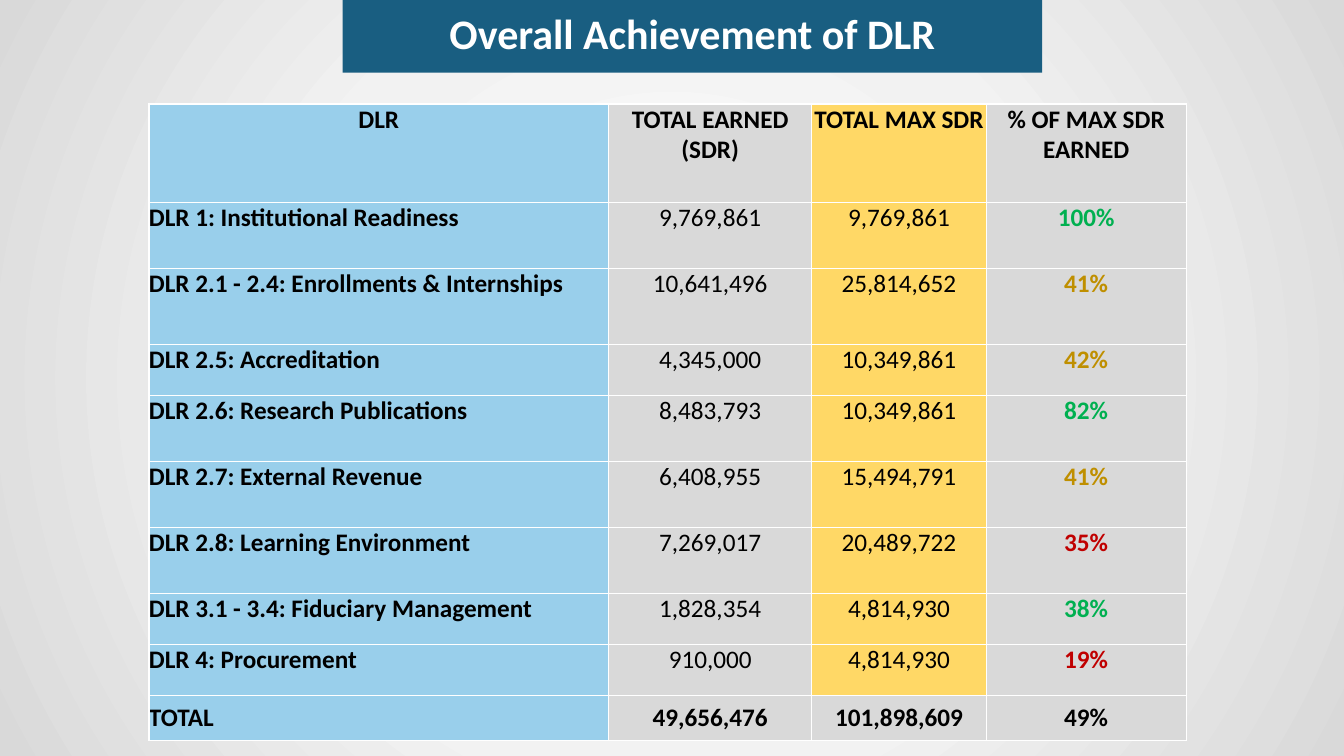
from pptx import Presentation
from pptx.dml.color import RGBColor
from pptx.enum.shapes import MSO_SHAPE
from pptx.enum.text import MSO_ANCHOR as ANCHOR, PP_ALIGN as ALIGN
from pptx.oxml import parse_xml
from pptx.oxml.ns import nsdecls, qn
from pptx.util import Pt

COLORS = {
    "white": "FFFFFF", "black": "000000", "navy": "195E81",
    "blue": "99CFEB", "gray": "D9D9D9", "yellow": "FFD866",
    "green": "00B050", "amber": "BF8F00", "red": "C00000", "light": "F2F2F2",
}


def rgb(name):
    return RGBColor.from_string(COLORS[name])


def write(tf, text, size=18, color="black", bold=True, align=ALIGN.CENTER, spacing=None):
    p = tf.paragraphs[0]
    p.alignment = align
    p.line_spacing = spacing
    r = p.add_run()
    r.text = text
    r.font.name = "Calibri"
    r.font.size = Pt(size)
    r.font.bold = bold
    r.font.color.rgb = rgb(color)


prs = Presentation()
prs.slide_width, prs.slide_height = Pt(960), Pt(540)
s = prs.slides.add_slide(prs.slide_layouts[6])

# Radial background
s.background.fill.gradient()
grad = s.element.find(".//" + qn("a:gradFill"))
stops = "".join(
    f'<a:gs pos="{pos * 1000}"><a:srgbClr val="{COLORS[name]}"/></a:gs>'
    for pos, name in [(0, "white"), (52, "light"), (100, "gray")])
grad.getparent().replace(grad, parse_xml(
    f'<a:gradFill {nsdecls("a")} rotWithShape="1"><a:gsLst>{stops}</a:gsLst>'
    '<a:path path="circle"><a:fillToRect l="50000" t="50000" r="50000" b="50000"/></a:path>'
    '</a:gradFill>'))

# Title banner
sp = s.shapes.add_shape(MSO_SHAPE.RECTANGLE, Pt(244.8), Pt(0), Pt(499.7), Pt(52))
sp.shadow.inherit = False
sp.fill.solid()
sp.fill.fore_color.rgb = rgb("navy")
sp.line.fill.background()
sp.text_frame.word_wrap = True
sp.text_frame.vertical_anchor = ANCHOR.MIDDLE
write(sp.text_frame, "Overall Achievement of DLR", size=30, color="white", spacing=0.9)

# Table data: cells, then the colour of the percentage
rows = [
    ("DLR", "TOTAL EARNED (SDR)", "TOTAL MAX SDR", "% OF MAX SDR EARNED", "black"),
    ("DLR 1: Institutional Readiness", "9,769,861", "9,769,861", "100%", "green"),
    ("DLR 2.1 - 2.4: Enrollments & Internships", "10,641,496", "25,814,652", "41%", "amber"),
    ("DLR 2.5: Accreditation", "4,345,000", "10,349,861", "42%", "amber"),
    ("DLR 2.6: Research Publications", "8,483,793", "10,349,861", "82%", "green"),
    ("DLR 2.7: External Revenue", "6,408,955", "15,494,791", "41%", "amber"),
    ("DLR 2.8: Learning Environment", "7,269,017", "20,489,722", "35%", "red"),
    ("DLR 3.1 - 3.4: Fiduciary Management", "1,828,354", "4,814,930", "38%", "green"),
    ("DLR 4: Procurement", "910,000", "4,814,930", "19%", "red"),
    ("TOTAL", "49,656,476", "101,898,609", "49%", "black"),
]
widths = [328.3, 145.2, 124.6, 142.8]
heights = [70.3, 47.1, 54.4, 36.4, 47.1, 47.1, 47.1, 36.4, 36.4, 32.4]
fills = ["blue", "gray", "yellow", "gray"]
last = len(rows) - 1

# Table
table = s.shapes.add_table(len(rows), len(widths), Pt(106.4), Pt(74.3),
                           Pt(sum(widths)), Pt(sum(heights))).table
for column, width in zip(table.columns, widths):
    column.width = Pt(width)
for i, (*texts, percent_color) in enumerate(rows):
    table.rows[i].height = Pt(heights[i])
    for j, text in enumerate(texts):
        cell = table.cell(i, j)
        cell.margin_left = cell.margin_right = cell.margin_top = cell.margin_bottom = 0
        cell.vertical_anchor = ANCHOR.MIDDLE if i == last else ANCHOR.TOP
        tcPr = cell._tc.get_or_add_tcPr()
        for side in ("lnL", "lnR", "lnT", "lnB"):
            tcPr.append(parse_xml(
                f'<a:{side} {nsdecls("a")} w="{Pt(1)}"><a:solidFill>'
                f'<a:srgbClr val="{COLORS["white"]}"/></a:solidFill></a:{side}>'))
        cell.fill.solid()
        cell.fill.fore_color.rgb = rgb("gray" if i == last and j else fills[j])
        write(cell.text_frame, text,
              color=percent_color if j == 3 else "black",
              bold=i in (0, last) or j in (0, 3),
              align=ALIGN.LEFT if i and j == 0 else ALIGN.CENTER)

prs.save("out.pptx")
